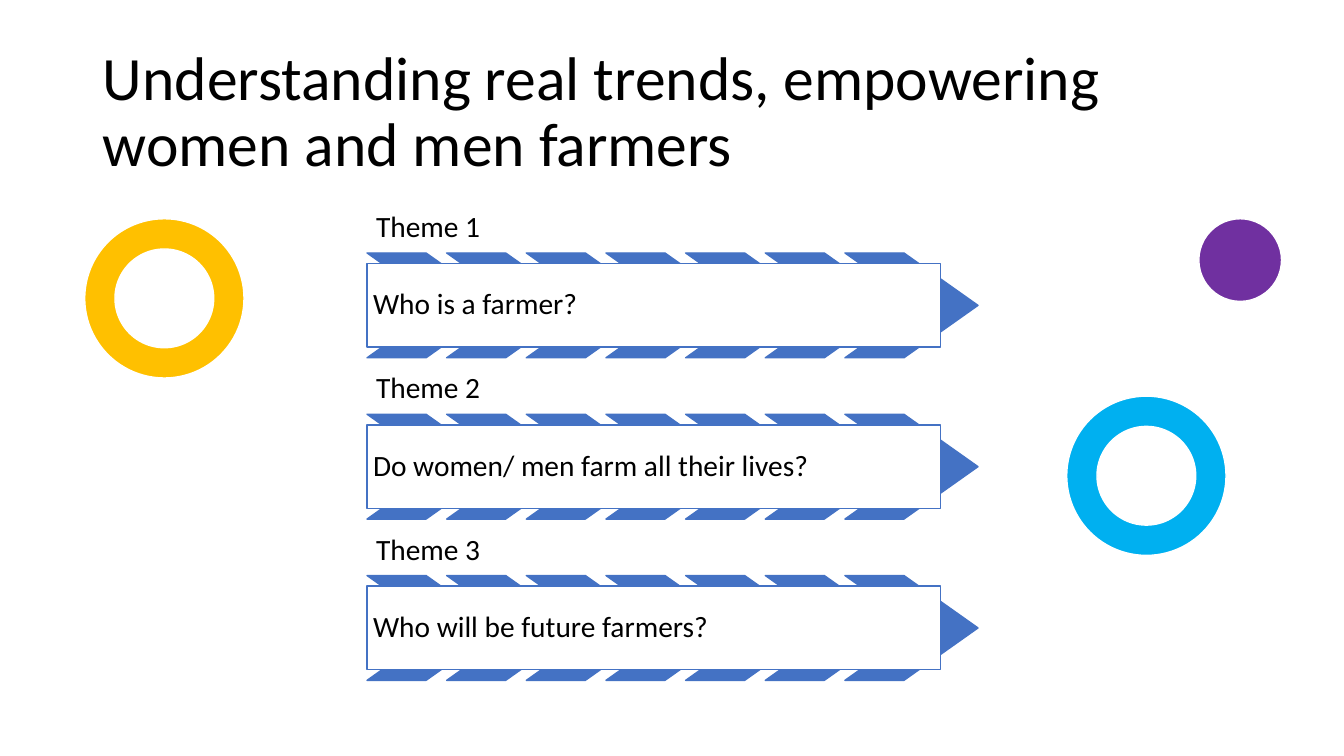
from dataclasses import dataclass

from pptx import Presentation
from pptx.dml.color import RGBColor
from pptx.enum.shapes import MSO_SHAPE as Shape
from pptx.enum.text import MSO_ANCHOR as Anchor, MSO_AUTO_SIZE as AutoSize, PP_ALIGN as Align
from pptx.util import Inches, Pt

TITLE = "Understanding real trends, empowering women and men farmers"
QUESTIONS = [
    ("Theme 1", "Who is a farmer?"),
    ("Theme 2", "Do women/ men farm all their lives?"),
    ("Theme 3", "Who will be future farmers?"),
]
RINGS = [
    (Shape.DONUT, 0.84, 2.17, 1.58, "FFC000"),
    (Shape.DONUT, 10.58, 3.93, 1.58, "00B0F0"),
    (Shape.OVAL, 11.89, 2.17, 0.82, "7030A0"),
]
LEFT, TOP, ROW_STEP = 3.64, 2.0, 1.6
LABEL_WIDTH, LABEL_HEIGHT = 5.62, 0.51
CHEVRONS, CHEVRON_STEP = 7, 0.79
CHEVRON_WIDTH, CHEVRON_HEIGHT, CHEVRON_POINT = 1.32, 1.04, 0.706
PANEL_WIDTH, PANEL_HEIGHT = 5.69, 0.83
RING_THICKNESS = 0.19


@dataclass(frozen=True)
class Theme:
    font: str = "Calibri"
    title_size: int = 44
    text_size: int = 21
    line_width: int = 1
    ink: str = "000000"
    paper: str = "FFFFFF"
    accent: str = "4472C4"


THEME = Theme()


def draw(page, kind, left, top, width, height, fill, line):
    shape = page.shapes.add_shape(kind, Inches(left), Inches(top), Inches(width), Inches(height))
    shape.shadow.inherit = False
    shape.fill.solid()
    shape.fill.fore_color.rgb = RGBColor.from_string(fill)
    shape.line.color.rgb = RGBColor.from_string(line)
    shape.line.width = Pt(THEME.line_width)
    return shape


def write(shape, text, size, anchor, inset=None):
    frame = shape.text_frame
    frame.text = text
    frame.word_wrap = True
    frame.auto_size = AutoSize.NONE
    frame.vertical_anchor = anchor
    if inset is not None:
        frame.margin_left = frame.margin_right = Inches(inset)
        frame.margin_top = frame.margin_bottom = Inches(inset)
    para = frame.paragraphs[0]
    para.alignment = Align.LEFT
    para.line_spacing = 0.9
    para.font.name = THEME.font
    para.font.size = Pt(size)
    para.font.color.rgb = RGBColor.from_string(THEME.ink)


def add_title(page):
    title = page.shapes.title
    title.left, title.top = Inches(0.92), Inches(0.4)
    title.width, title.height = Inches(11.5), Inches(1.45)
    write(title, TITLE, THEME.title_size, Anchor.MIDDLE)


def add_question(page, top, label, question):
    box = page.shapes.add_textbox(Inches(LEFT), Inches(top), Inches(LABEL_WIDTH), Inches(LABEL_HEIGHT))
    write(box, label, THEME.text_size, Anchor.BOTTOM, 0.09)

    band_top = top + LABEL_HEIGHT
    for index in range(CHEVRONS):
        chevron = draw(page, Shape.CHEVRON, LEFT + index * CHEVRON_STEP, band_top,
                       CHEVRON_WIDTH, CHEVRON_HEIGHT, THEME.accent, THEME.accent)
        chevron.adjustments[0] = CHEVRON_POINT

    panel_top = band_top + (CHEVRON_HEIGHT - PANEL_HEIGHT) / 2
    panel = draw(page, Shape.RECTANGLE, LEFT, panel_top, PANEL_WIDTH, PANEL_HEIGHT,
                 THEME.paper, THEME.accent)
    write(panel, question, THEME.text_size, Anchor.MIDDLE, 0.06)


def add_ring(page, kind, left, top, size, color):
    ring = draw(page, kind, left, top, size, size, color, THEME.paper)
    if kind == Shape.DONUT:
        ring.adjustments[0] = RING_THICKNESS


def main():
    deck = Presentation()
    deck.slide_width, deck.slide_height = Inches(13.33), Inches(7.5)
    page = deck.slides.add_slide(deck.slide_layouts[5])
    add_title(page)
    for row, (label, question) in enumerate(QUESTIONS):
        add_question(page, TOP + row * ROW_STEP, label, question)
    for ring in RINGS:
        add_ring(page, *ring)
    deck.save("out.pptx")


if __name__ == "__main__":
    main()
